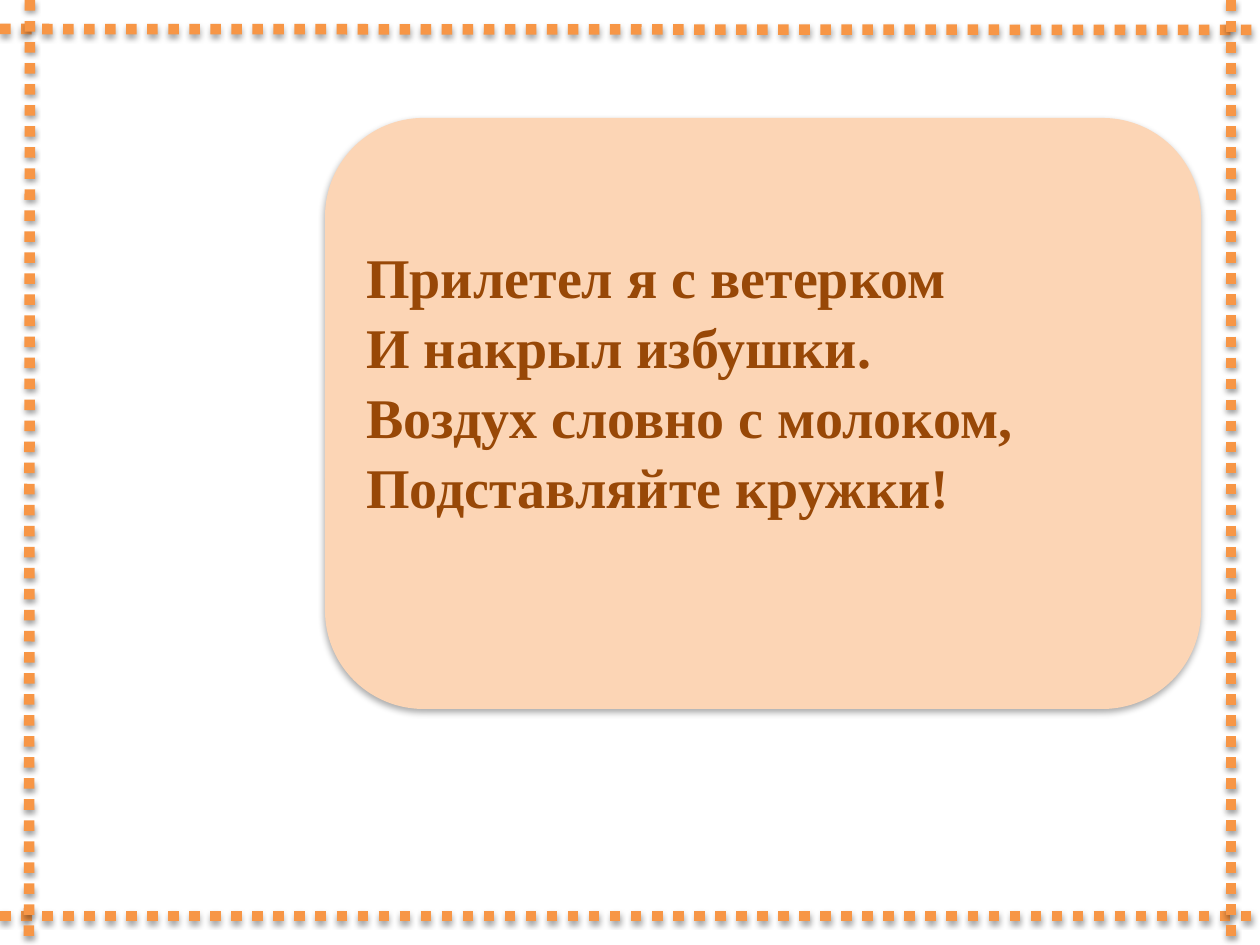
from lxml import etree
from pptx import Presentation
from pptx.dml.color import RGBColor
from pptx.enum.dml import MSO_LINE
from pptx.enum.shapes import MSO_CONNECTOR, MSO_SHAPE
from pptx.enum.text import MSO_ANCHOR, PP_ALIGN
from pptx.oxml.ns import qn
from pptx.util import Emu, Pt

RIDDLE = [
    "Прилетел я с ветерком",
    "И накрыл избушки.",
    "Воздух словно с молоком,",
    "Подставляйте кружки!",
]

THEME = {
    "border": RGBColor.from_string("F79646"),
    "card": RGBColor.from_string("FCD5B5"),
    "border_width": Pt(6),
    "border_shadow": {"blur": 3.1, "distance": 1.8, "opacity": 35},
    "card_shadow": {"blur": 3.5, "distance": 2.2, "opacity": 32},
    "line_spacing": 1.04,
}
RIDDLE_FONT = {"name": "Times New Roman", "size": Pt(32), "bold": True}
RIDDLE_COLOR = RGBColor.from_string("984807")

EMU_PER_PX = 914400 / 126
WIDTH, HEIGHT = 1260, 945
BORDER_LINES = [
    (0, 29, WIDTH, 30),
    (0, 916, WIDTH, 916),
    (30, 0, 29, HEIGHT),
    (1231, 0, 1231, HEIGHT),
]
CARD_BOX = (325, 118, 876, 591)
CARD_BOTTOM_INSET = 73


def px(length):
    return Emu(round(length * EMU_PER_PX))


def add_shadow(shape, blur, distance, opacity):
    """Give the shape a black shadow straight below; blur and distance in points."""
    properties = shape._element.spPr
    for old_effects in properties.findall(qn("a:effectLst")):
        properties.remove(old_effects)
    effects = etree.SubElement(properties, qn("a:effectLst"))
    shadow = etree.SubElement(
        effects, qn("a:outerShdw"), blurRad=str(Pt(blur)), dist=str(Pt(distance)),
        dir="5400000", rotWithShape="0")
    color = etree.SubElement(shadow, qn("a:srgbClr"), val="000000")
    etree.SubElement(color, qn("a:alpha"), val=str(opacity * 1000))


def add_border(slide):
    for ends in BORDER_LINES:
        connector = slide.shapes.add_connector(MSO_CONNECTOR.STRAIGHT, *map(px, ends))
        connector.line.color.rgb = THEME["border"]
        connector.line.width = THEME["border_width"]
        connector.line.dash_style = MSO_LINE.ROUND_DOT
        add_shadow(connector, **THEME["border_shadow"])


def add_riddle_card(slide):
    card = slide.shapes.add_shape(MSO_SHAPE.ROUNDED_RECTANGLE, *map(px, CARD_BOX))
    card.fill.solid()
    card.fill.fore_color.rgb = THEME["card"]
    card.line.fill.background()
    add_shadow(card, **THEME["card_shadow"])

    frame = card.text_frame
    frame.word_wrap = True
    frame.vertical_anchor = MSO_ANCHOR.MIDDLE
    frame.margin_bottom = px(CARD_BOTTOM_INSET)
    for index, verse in enumerate(RIDDLE):
        paragraph = frame.add_paragraph() if index else frame.paragraphs[0]
        paragraph.alignment = PP_ALIGN.LEFT
        paragraph.line_spacing = THEME["line_spacing"]
        run = paragraph.add_run()
        run.text = verse
        for attribute, value in RIDDLE_FONT.items():
            setattr(run.font, attribute, value)
        run.font.color.rgb = RIDDLE_COLOR


def main():
    presentation = Presentation()
    presentation.slide_width = px(WIDTH)
    presentation.slide_height = px(HEIGHT)
    slide = presentation.slides.add_slide(presentation.slide_layouts[6])
    add_border(slide)
    add_riddle_card(slide)
    presentation.save("out.pptx")


if __name__ == "__main__":
    main()
